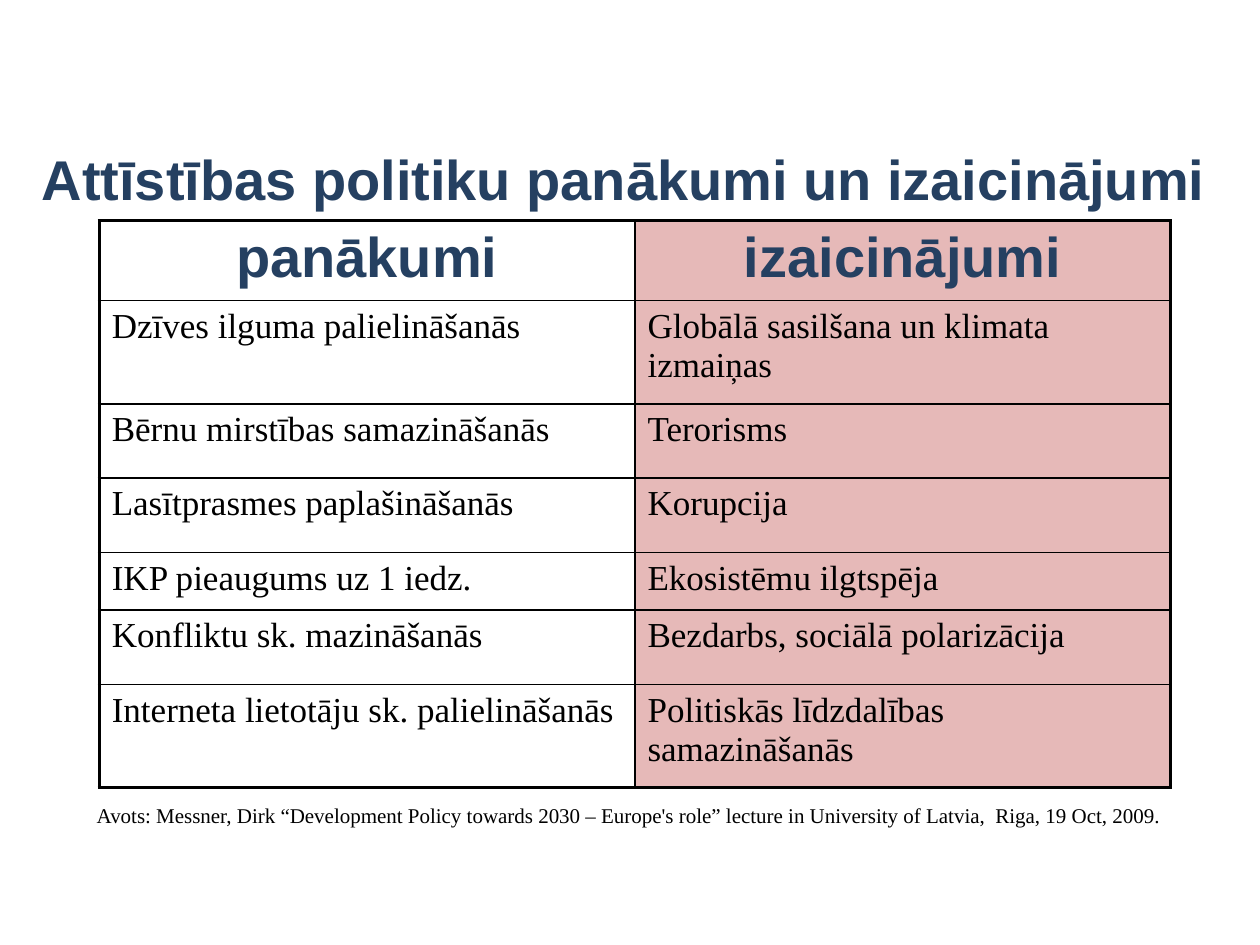
from lxml.etree import SubElement
from pptx import Presentation
from pptx.dml.color import RGBColor
from pptx.enum.text import MSO_ANCHOR as Anchor, PP_ALIGN as Align
from pptx.oxml.ns import qn
from pptx.util import Cm, Pt

NAVY = RGBColor(0x25, 0x40, 0x61)
BLACK = RGBColor(0, 0, 0)
ROSE = RGBColor(0xE6, 0xB9, 0xB8)

HEADING = {"name": "Arial", "size": Pt(32), "bold": True, "color": NAVY}
BODY = {"name": "Times New Roman", "size": Pt(20), "bold": False, "color": BLACK}
SOURCE = {**BODY, "size": Pt(12)}

THIN, THICK = 1, 2.25

ROWS = [
    ("panākumi", "izaicinājumi", 1.61),
    ("Dzīves ilguma palielināšanās", "Globālā sasilšana un klimata izmaiņas", 2.08),
    ("Bērnu mirstības samazināšanās", "Terorisms", 1.5),
    ("Lasītprasmes paplašināšanās", "Korupcija", 1.5),
    ("IKP pieaugums uz 1 iedz.", "Ekosistēmu ilgtspēja", 1.16),
    ("Konfliktu sk. mazināšanās", "Bezdarbs, sociālā polarizācija", 1.5),
    ("Interneta lietotāju sk. palielināšanās", "Politiskās līdzdalības samazināšanās", 2.08),
]


def write(frame, text, style, align=Align.LEFT):
    para = frame.paragraphs[0]
    para.alignment = align
    span = para.add_run()
    span.text = text
    for key, value in style.items():
        if key == "color":
            span.font.color.rgb = value
        else:
            setattr(span.font, key, value)


def add_text(page, box, text, style, align=Align.LEFT, anchor=Anchor.TOP):
    frame = page.shapes.add_textbox(*map(Cm, box)).text_frame
    frame.word_wrap = True
    frame.vertical_anchor = anchor
    write(frame, text, style, align)


def set_borders(cell, widths):
    properties = cell._tc.get_or_add_tcPr()
    for side, width in widths.items():
        line = SubElement(properties, qn(f"a:ln{side}"), w=str(int(Pt(width))))
        fill = SubElement(line, qn("a:solidFill"))
        SubElement(fill, qn("a:srgbClr"), val=str(BLACK))


def add_comparison(page, box):
    """Two equal columns: achievements and shaded challenges."""
    table = page.shapes.add_table(len(ROWS), 2, *map(Cm, box)).table
    table.first_row = table.horz_banding = False
    for column in table.columns:
        column.width = Cm(box[2] / 2)
    last = len(ROWS) - 1
    for r, (*texts, height) in enumerate(ROWS):
        table.rows[r].height = Cm(height)
        for c, text in enumerate(texts):
            cell = table.cell(r, c)
            # Thick outer frame, thin inner rules
            set_borders(cell, {
                "L": THICK if c == 0 else THIN,
                "R": THICK if c == 1 else THIN,
                "T": THICK if r == 0 else THIN,
                "B": THICK if r == last else THIN,
            })
            if c == 1:
                cell.fill.solid()
                cell.fill.fore_color.rgb = ROSE
            else:
                cell.fill.background()
            if r == 0:
                write(cell.text_frame, text, HEADING, Align.CENTER)
            else:
                write(cell.text_frame, text, BODY)


def main():
    deck = Presentation()
    deck.slide_width, deck.slide_height = Cm(25.4), Cm(19.05)
    page = deck.slides.add_slide(deck.slide_layouts[6])

    # Title
    add_text(page, (0.2, 2.74, 24.77, 1.7), "Attīstības politiku panākumi un izaicinājumi",
             HEADING, Align.CENTER, Anchor.MIDDLE)
    # Comparison table
    add_comparison(page, (2, 4.45, 21.6, sum(row[2] for row in ROWS)))
    # Source line
    add_text(page, (1.7, 16.05, 22.23, 0.76),
             "Avots: Messner, Dirk “Development Policy towards 2030 – Europe's role” "
             "lecture in University of Latvia,  Riga, 19 Oct, 2009.", SOURCE)

    deck.save("out.pptx")


if __name__ == "__main__":
    main()
